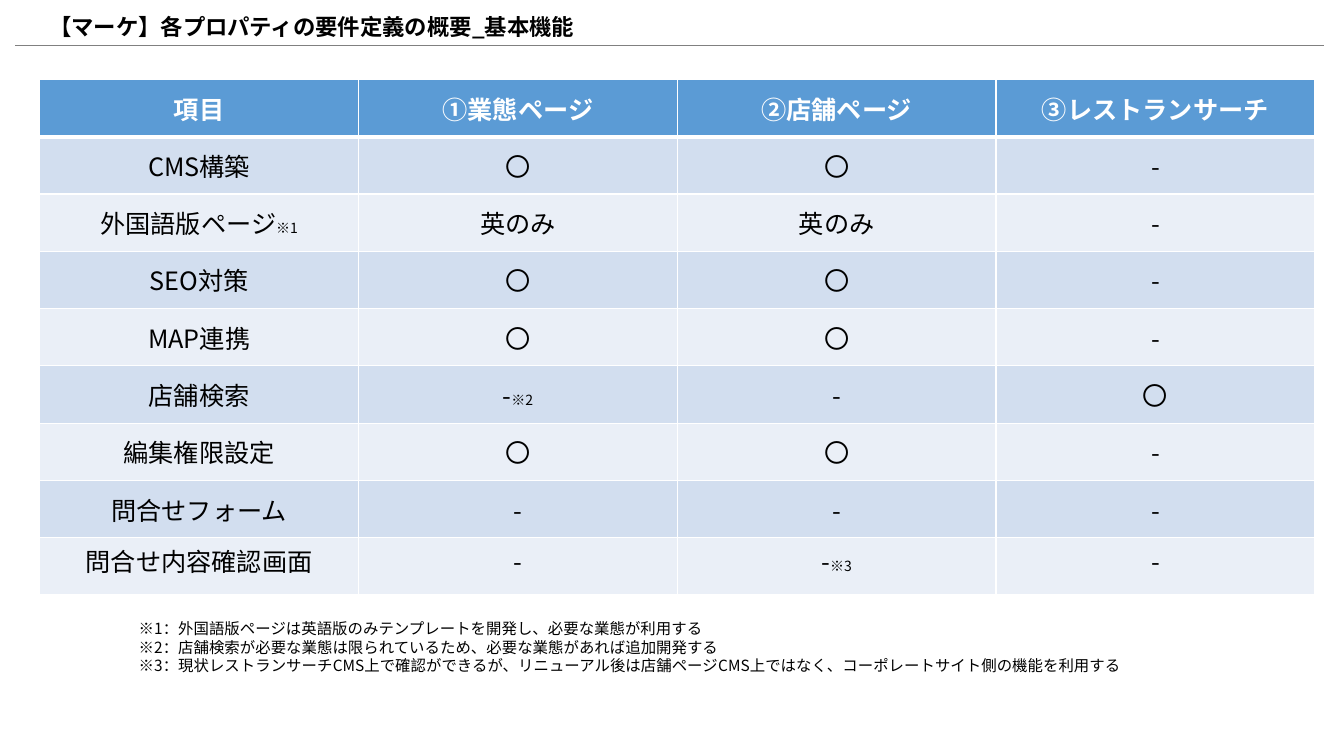
from lxml import etree
from pptx import Presentation
from pptx.dml.color import RGBColor
from pptx.enum import shapes, text
from pptx.oxml import ns
from pptx.util import Pt

FONT = "Noto Sans CJK JP"
BLACK = RGBColor(0x00, 0x00, 0x00)
WHITE = RGBColor(0xFF, 0xFF, 0xFF)
GRAY = RGBColor(0x80, 0x80, 0x80)
HEADER_BLUE = RGBColor(0x5B, 0x9B, 0xD5)
BANDS = (RGBColor(0xD2, 0xDE, 0xEF), RGBColor(0xEA, 0xEF, 0xF7))

TITLE = "【マーケ】各プロパティの要件定義の概要_基本機能"
HEADER = ["項目", "①業態ページ", "②店舗ページ", "③レストランサーチ"]
FEATURES = [
    ["CMS構築", "〇", "〇", "-"],
    ["外国語版ページ※1", "英のみ", "英のみ", "-"],
    ["SEO対策", "〇", "〇", "-"],
    ["MAP連携", "〇", "〇", "-"],
    ["店舗検索", "-※2", "-", "〇"],
    ["編集権限設定", "〇", "〇", "-"],
    ["問合せフォーム", "-", "-", "-"],
    ["問合せ内容確認画面", "-", "-※3", "-"],
]
NOTES = [
    "※1：外国語版ページは英語版のみテンプレートを開発し、必要な業態が利用する",
    "※2：店舗検索が必要な業態は限られているため、必要な業態があれば追加開発する",
    "※3：現状レストランサーチCMS上で確認ができるが、リニューアル後は店舗ページCMS上ではなく、"
    "コーポレートサイト側の機能を利用する",
]


def add_text(paragraph, words, size=18, color=BLACK, bold=False):
    run = paragraph.add_run()
    run.text = words
    font = run.font
    font.name, font.size, font.bold = FONT, Pt(size), bold
    font.color.rgb = color
    east_asian = etree.SubElement(font._element, ns.qn("a:ea"))
    east_asian.set("typeface", FONT)


def add_text_box(slide, box, lines, size, bold=False):
    frame = slide.shapes.add_textbox(*map(Pt, box)).text_frame
    frame.word_wrap = True
    for index, line in enumerate(lines):
        paragraph = frame.add_paragraph() if index else frame.paragraphs[0]
        paragraph.line_spacing = Pt(round(size * 1.2, 1))
        add_text(paragraph, line, size=size, bold=bold)


def add_heading(slide, box):
    """Title in the box, with a rule along its lower edge."""
    left, top, width, height = box
    add_text_box(slide, (left + 17, top, 539, height), [TITLE], size=16, bold=True)
    bottom = Pt(top + height)
    rule = slide.shapes.add_connector(
        shapes.MSO_CONNECTOR.STRAIGHT, Pt(left), bottom, Pt(left + width), bottom)
    rule.line.color.rgb = GRAY
    rule.line.width = Pt(0.5)
    etree.SubElement(rule._element.spPr, ns.qn("a:effectLst"))


def set_borders(cell, **widths):
    """White borders; the keywords are the sides L, R, T and B."""
    properties = cell._tc.get_or_add_tcPr()
    for side, width in widths.items():
        border = etree.SubElement(properties, ns.qn(f"a:ln{side}"), w=str(Pt(width)))
        fill = etree.SubElement(border, ns.qn("a:solidFill"))
        etree.SubElement(fill, ns.qn("a:srgbClr"), val=str(WHITE))


def fill_cell(cell, words, fill, is_header, is_last):
    set_borders(cell, L=1, R=1, T=1, B=3 if is_header else 1)
    cell.fill.solid()
    cell.fill.fore_color.rgb = fill
    anchors = text.MSO_ANCHOR
    cell.vertical_anchor = anchors.TOP if is_last else anchors.MIDDLE
    paragraph = cell.text_frame.paragraphs[0]
    paragraph.alignment = text.PP_ALIGN.CENTER
    label, mark, number = words.partition("※")
    add_text(paragraph, label, color=WHITE if is_header else BLACK, bold=is_header)
    if mark:
        add_text(paragraph, mark + number, size=10)


def add_feature_table(slide, box):
    rows = [HEADER] + FEATURES
    table = slide.shapes.add_table(len(rows), len(HEADER), *map(Pt, box)).table
    for column in table.columns:
        column.width = Pt(box[2] / len(HEADER))
    for r, row in enumerate(rows):
        table.rows[r].height = Pt(box[3] / len(rows))
        fill = BANDS[(r - 1) % 2] if r else HEADER_BLUE
        for c, words in enumerate(row):
            fill_cell(table.cell(r, c), words, fill, r == 0, r == len(rows) - 1)


def main():
    deck = Presentation()
    deck.slide_width, deck.slide_height = Pt(960), Pt(540)
    slide = deck.slides.add_slide(deck.slide_layouts[6])
    add_heading(slide, (11, 5.5, 935, 27))
    add_feature_table(slide, (28.4, 56.8, 910.8, 368.2))
    add_text_box(slide, (92, 439, 724.5, 47.5), NOTES, size=11)
    deck.save("out.pptx")


if __name__ == "__main__":
    main()
